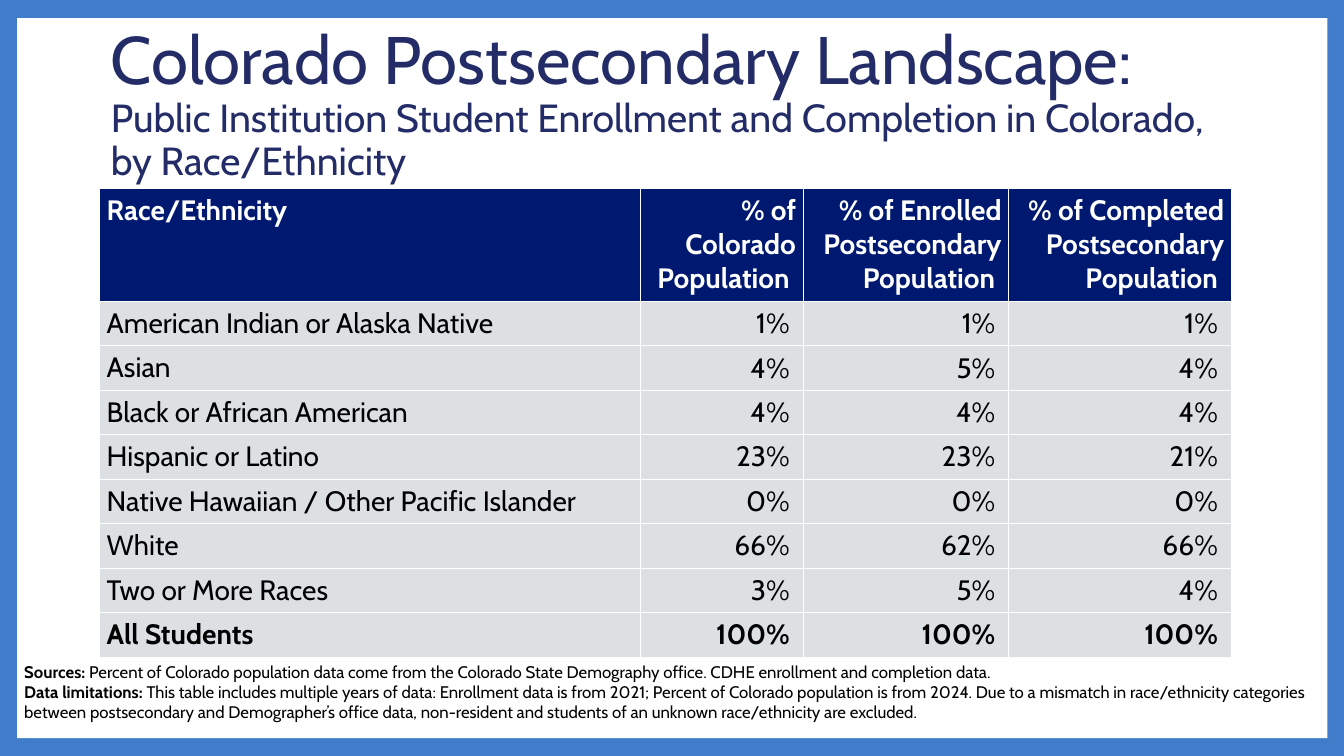
from lxml import etree
from pptx import Presentation
from pptx.dml.color import RGBColor
from pptx.enum.shapes import MSO_SHAPE
from pptx.enum.text import MSO_ANCHOR, MSO_AUTO_SIZE, PP_ALIGN
from pptx.oxml import parse_xml
from pptx.util import Cm, Pt

RECT = MSO_SHAPE.RECTANGLE
TOP, MIDDLE, BOTTOM = MSO_ANCHOR.TOP, MSO_ANCHOR.MIDDLE, MSO_ANCHOR.BOTTOM
LEFT, RIGHT = PP_ALIGN.LEFT, PP_ALIGN.RIGHT
FONT = "Cabin"
NBSP = chr(160)
DRAWING_NS = "http://schemas.openxmlformats.org/drawingml/2006/main"
COLORS = {"frame": "407CCA", "white": "FFFFFF", "title": "232C67",
          "header": "001970", "body": "DDE0E3", "text": "000000"}


def set_font(font, size, color, bold=False):
    font.name, font.size, font.bold = FONT, Pt(size), bold
    font.color.rgb = RGBColor.from_string(COLORS[color])


def set_fill(fill, color):
    fill.solid()
    fill.fore_color.rgb = RGBColor.from_string(COLORS[color])


prs = Presentation()
prs.slide_width, prs.slide_height = Cm(33.87), Cm(19.05)
s = prs.slides.add_slide(prs.slide_layouts[5])
set_fill(s.background.fill, "frame")

# White panel, behind the title
title = s.shapes.title
panel = s.shapes.add_shape(RECT, Cm(0.43), Cm(0.46), Cm(33.02), Cm(18.14))
panel.shadow.inherit = False
set_fill(panel.fill, "white")
panel.line.fill.background()
title._element.addprevious(panel._element)

# Title
title.left, title.top, title.width, title.height = Cm(2.54), Cm(0.53), Cm(28.8), Cm(4.24)
tf = title.text_frame
tf.word_wrap = True
tf.auto_size = MSO_AUTO_SIZE.NONE
tf.vertical_anchor = MIDDLE
p = tf.paragraphs[0]
p.alignment, p.line_spacing = LEFT, 0.9
r = p.add_run()
r.text = "Colorado Postsecondary Landscape: "
set_font(r.font, 48, "title")
p.add_line_break()
r = p.add_run()
r.text = "Public Institution Student Enrollment and Completion in Colorado, by Race/Ethnicity"
set_font(r.font, 28, "title")

# Table of shares by race/ethnicity
rows = [
    ("Race/Ethnicity", "% of Colorado Population",
     "% of Enrolled Postsecondary Population", "% of Completed Postsecondary Population"),
    ("American Indian or Alaska Native", "1%", "1%", "1%"),
    ("Asian", "4%", "5%", "4%"),
    ("Black or African American", "4%", "4%", "4%"),
    ("Hispanic or Latino", "23%", "23%", "21%"),
    ("Native Hawaiian / Other Pacific Islander", "0%", "0%", "0%"),
    ("White", "66%", "62%", "66%"),
    ("Two or More Races", "3%", "5%", "4%"),
    ("All Students", "100%", "100%", "100%"),
]
col_widths = [13.64, 4.09, 5.18, 5.61]
header_height, row_height = 2.39, 0.94
last = len(rows) - 1
table = s.shapes.add_table(len(rows), len(col_widths), Cm(2.51), Cm(4.75),
                           Cm(sum(col_widths)), Cm(header_height + last * row_height)).table
for column, width in zip(table.columns, col_widths):
    column.width = Cm(width)
for i, row in enumerate(rows):
    header = i == 0
    table.rows[i].height = Cm(header_height if header else row_height)
    for j, text in enumerate(row):
        number = not header and j > 0
        cell = table.cell(i, j)
        cell.text = text + NBSP
        cell.margin_left = cell.margin_right = Cm(0.18)
        cell.margin_top = cell.margin_bottom = Cm(0.13)
        cell.vertical_anchor = BOTTOM if number else TOP
        set_fill(cell.fill, "header" if header else "body")
        p = cell.text_frame.paragraphs[0]
        p.alignment = RIGHT if j else LEFT
        if number:
            p.line_spacing = Pt(14.2)
        set_font(p.font, 20, "white" if header else "text", i in (0, last))
        # Thin white borders
        tcPr = cell._tc.get_or_add_tcPr()
        for k, side in enumerate(("lnL", "lnR", "lnT", "lnB")):
            border = parse_xml(f'<a:{side} xmlns:a="{DRAWING_NS}" w="{Pt(0.75)}"/>')
            fill = etree.SubElement(border, f"{{{DRAWING_NS}}}solidFill")
            etree.SubElement(fill, f"{{{DRAWING_NS}}}srgbClr", val=COLORS["white"])
            tcPr.insert(k, border)

# Sources and limitations
notes = [
    ("Sources:", " Percent of Colorado population data come from the Colorado State "
     "Demography office. CDHE enrollment and completion data."),
    ("Data limitations: ", "This table includes multiple years of data: Enrollment data is from "
     "2021; Percent of Colorado population is from 2024. Due to a mismatch in race/ethnicity "
     "categories between postsecondary and Demographer’s office data, non-resident and students "
     "of an unknown race/ethnicity are excluded."),
]
tf = s.shapes.add_textbox(Cm(0.36), Cm(16.54), Cm(33.5), Cm(1.8)).text_frame
tf.word_wrap = True
for i, note in enumerate(notes):
    p = tf.add_paragraph() if i else tf.paragraphs[0]
    for text, bold in zip(note, (True, False)):
        r = p.add_run()
        r.text = text
        set_font(r.font, 12, "text", bold)

prs.save("out.pptx")
